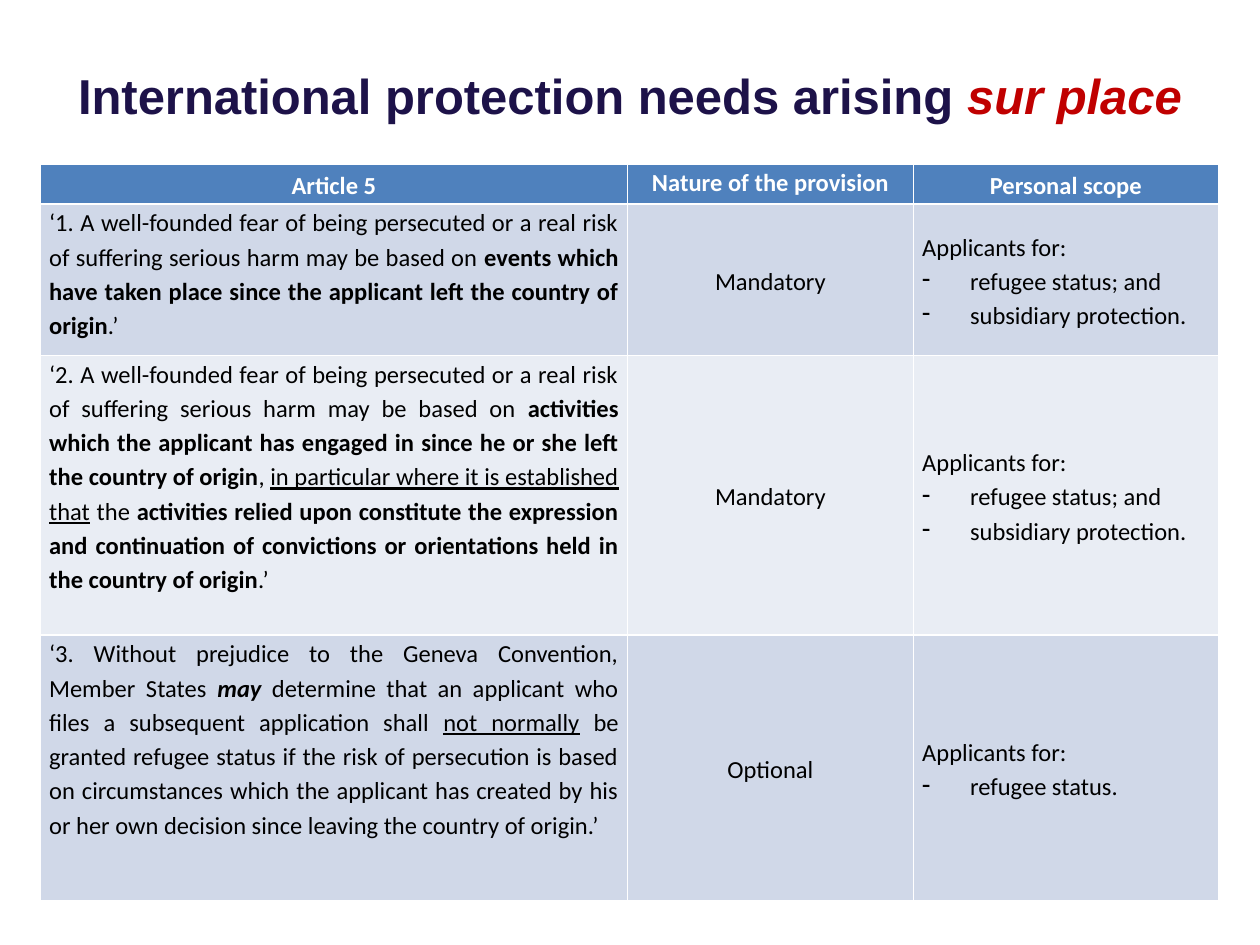
from lxml import etree
from pptx import Presentation
from pptx.dml.color import RGBColor
from pptx.enum.text import MSO_ANCHOR, PP_ALIGN
from pptx.oxml.ns import qn
from pptx.util import Inches, Pt

TOP, MIDDLE = MSO_ANCHOR.TOP, MSO_ANCHOR.MIDDLE
LEFT, CENTER, JUSTIFY = PP_ALIGN.LEFT, PP_ALIGN.CENTER, PP_ALIGN.JUSTIFY

NAVY = RGBColor(0x1D, 0x12, 0x49)
RED = RGBColor(0xC0, 0x00, 0x00)
WHITE = RGBColor(0xFF, 0xFF, 0xFF)
BLACK = RGBColor(0x00, 0x00, 0x00)
HEADER_BLUE = RGBColor(0x4F, 0x81, 0xBD)
BAND_FILLS = (RGBColor(0xD0, 0xD8, 0xE8), RGBColor(0xE9, 0xED, 0xF4))

COLUMN_WIDTHS = (4.66, 2.27, 2.42)
ROW_HEIGHTS = (0.32, 1.2, 2.22, 2.11)
HANGING_INDENT = Inches(0.38)

HEADERS = (("Article 5", MIDDLE), ("Nature of the provision", TOP), ("Personal scope", MIDDLE))
BOTH_STATUSES = ("refugee status; and", "subsidiary protection.")
PROVISIONS = (
    (
        (
            ("‘1. A well-founded fear of being persecuted or a real risk of suffering "
             "serious harm may be based on ", ""),
            ("events which have taken place since the applicant left the country of origin", "b"),
            (".’", ""),
        ),
        "Mandatory",
        BOTH_STATUSES,
    ),
    (
        (
            ("‘2. A well-founded fear of being persecuted or a real risk of suffering "
             "serious harm may be based on ", ""),
            ("activities which the applicant has engaged in since he or she left "
             "the country of origin", "b"),
            (", ", ""),
            ("in particular where it is established that", "u"),
            (" the ", ""),
            ("activities relied upon constitute the expression and continuation of "
             "convictions or orientations held in the country of origin", "b"),
            (".’", ""),
        ),
        "Mandatory",
        BOTH_STATUSES,
    ),
    (
        (
            ("‘3. Without prejudice to the Geneva Convention, Member States ", ""),
            ("may ", "bi"),
            ("determine that an applicant who files a subsequent application shall ", ""),
            ("not normally", "u"),
            (" be granted refugee status if the risk of persecution is based on "
             "circumstances which the applicant has created by his or her own decision "
             "since leaving the country of origin.’", ""),
        ),
        "Optional",
        ("refugee status.",),
    ),
)


def add_spans(para, spans):
    """Add (text, style) spans, where style holds any of b, i and u."""
    for text, style in spans:
        span = para.add_run()
        span.text = text
        if "b" in style:
            span.font.bold = True
        if "i" in style:
            span.font.italic = True
        if "u" in style:
            span.font.underline = True


def add_dash(para):
    """Give the paragraph a hanging dash bullet."""
    properties = para._p.get_or_add_pPr()
    properties.set("marL", str(HANGING_INDENT))
    properties.set("indent", str(-HANGING_INDENT))
    etree.SubElement(properties, qn("a:buChar")).set("char", "-")


def style_paragraph(para, align, color=BLACK, bold=False):
    """Set the shared table typography of one paragraph."""
    para.alignment = align
    para.line_spacing = 1.15
    para.font.name = "Calibri"
    para.font.size = Pt(14)
    para.font.bold = bold
    para.font.color.rgb = color


def style_cell(cell, fill, anchor):
    """Set fill, anchor and margins of a table cell."""
    cell.fill.solid()
    cell.fill.fore_color.rgb = fill
    cell.vertical_anchor = anchor
    cell.margin_left = cell.margin_right = Inches(0.07)
    cell.margin_top = cell.margin_bottom = 0


def fill_text(cell, spans, align, **style):
    """Write one paragraph of spans into a cell."""
    para = cell.text_frame.paragraphs[0]
    style_paragraph(para, align, **style)
    add_spans(para, spans)


def fill_scope(cell, statuses):
    """Write the applicant lead-in and its dashed list of statuses."""
    fill_text(cell, [("Applicants for:", "")], LEFT)
    for status in statuses:
        para = cell.text_frame.add_paragraph()
        add_dash(para)
        style_paragraph(para, LEFT)
        add_spans(para, [(status, "")])


def add_title(page):
    """Add the centred two-colour slide title."""
    box = page.shapes.add_textbox(Inches(0.5), Inches(0.23), Inches(9), Inches(1.04))
    box.text_frame.word_wrap = True
    box.text_frame.vertical_anchor = MIDDLE
    para = box.text_frame.paragraphs[0]
    para.alignment = CENTER
    para.font.name = "Arial"
    para.font.size = Pt(28)
    para.font.bold = True
    para.font.color.rgb = NAVY
    add_spans(para, [("International protection needs arising ", ""), ("sur place", "i")])
    para.runs[-1].font.color.rgb = RED


def add_provisions_table(page):
    """Add the table of Article 5 provisions."""
    table = page.shapes.add_table(
        len(ROW_HEIGHTS), len(COLUMN_WIDTHS), Inches(0.32), Inches(1.3),
        Inches(sum(COLUMN_WIDTHS)), Inches(sum(ROW_HEIGHTS)),
    ).table
    for column, width in zip(table.columns, COLUMN_WIDTHS):
        column.width = Inches(width)
    for row, height in zip(table.rows, ROW_HEIGHTS):
        row.height = Inches(height)
    for index, (label, anchor) in enumerate(HEADERS):
        cell = table.cell(0, index)
        style_cell(cell, HEADER_BLUE, anchor)
        fill_text(cell, [(label, "")], CENTER, color=WHITE, bold=True)
    for index, (article, nature, statuses) in enumerate(PROVISIONS):
        cells = table.rows[index + 1].cells
        for cell, anchor in zip(cells, (TOP, MIDDLE, MIDDLE)):
            style_cell(cell, BAND_FILLS[index % 2], anchor)
        fill_text(cells[0], article, JUSTIFY)
        fill_text(cells[1], [(nature, "")], CENTER)
        fill_scope(cells[2], statuses)


def main():
    """Build and save the slide."""
    deck = Presentation()
    deck.slide_width, deck.slide_height = Inches(10), Inches(7.5)
    page = deck.slides.add_slide(deck.slide_layouts[6])
    add_title(page)
    add_provisions_table(page)
    deck.save("out.pptx")


if __name__ == "__main__":
    main()
